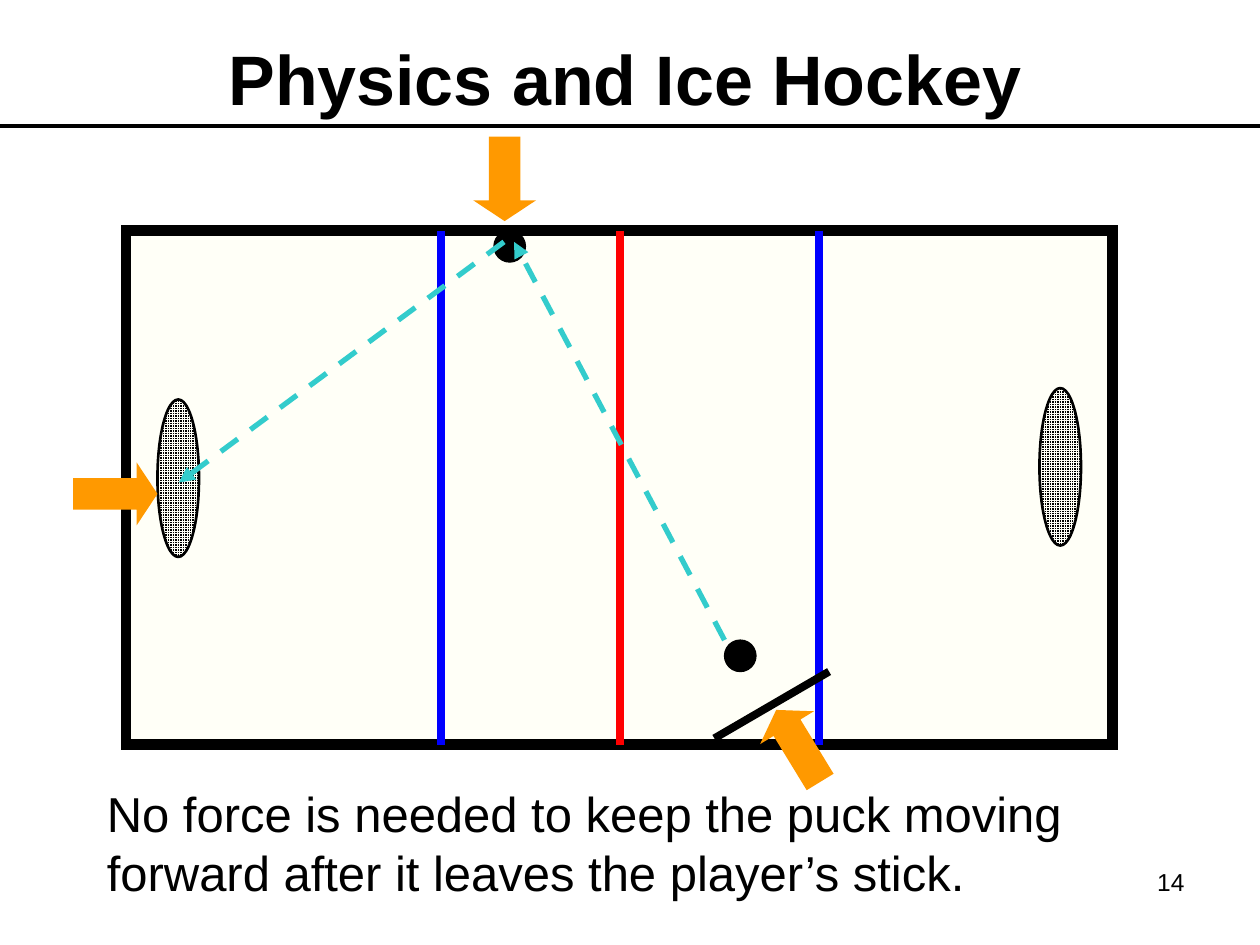
from pptx import Presentation
from pptx.util import Inches, Pt
from pptx.dml.color import RGBColor as RGB
from pptx.enum.dml import MSO_LINE as Dash, MSO_PATTERN as Pat
from pptx.enum.shapes import MSO_SHAPE as Form, MSO_CONNECTOR as Conn
from pptx.enum.text import MSO_ANCHOR as Anchor, MSO_AUTO_SIZE as Auto, PP_ALIGN as Align
from pptx.oxml.ns import qn
from lxml.etree import SubElement as Sub

THEME = {
    "font": "Arial", "ink": "000000", "ice": "FFFFF7", "red": "FF0000",
    "blue": "0000FF", "path": "33CCCC", "force": "FF9900",
    "title": 40, "body": 28, "page": 14,
}

TITLE = "Physics and Ice Hockey"
NOTE = ["No force is needed to keep the puck moving",
        "forward after it leaves the player’s stick."]
PAGE = ["14"]

RINK = (1, 1.83, 7.83, 4.08)
ZONES = [(4.92, "red"), (6.5, "blue"), (3.5, "blue")]
GOALS = [(1.25, 3.17), (8.25, 3.08)]
PUCKS = [(5.75, 5.08), (3.92, 1.83)]
STICK = ((5.67, 5.86), (6.58, 5.33))
SHOTS = [((5.75, 5.08), (4.08, 1.92)), ((4, 1.92), (1.42, 3.83))]
FORCES = [(6, 5.67, 238.6), (3.67, 1.17, 90), (0.58, 3.67, 0)]


def tint(name):
    return RGB.from_string(THEME[name])


def put(obj, vals):
    for key, val in vals.items():
        setattr(obj, key, val)


def place(box):
    return [Inches(v) for v in box]


def shape(form, box, fill, width=0):
    item = slide.shapes.add_shape(form, *place(box))
    item.shadow.inherit = False
    if fill == "net":
        item.fill.patterned()
        item.fill.pattern = Pat.SMALL_GRID
        item.fill.fore_color.rgb = tint("ice")
        item.fill.back_color.rgb = tint("ink")
    else:
        item.fill.solid()
        item.fill.fore_color.rgb = tint(fill)
    if width:
        item.line.color.rgb = tint("ink")
        item.line.width = Pt(width)
    else:
        item.line.fill.background()
    return item


def line(start, end, color, width, shot=False):
    item = slide.shapes.add_connector(Conn.STRAIGHT, *place(start + end))
    item.line.color.rgb = tint(color)
    item.line.width = Pt(width)
    props = item._element.spPr
    if shot:
        item.line.dash_style = Dash.DASH
        Sub(props.find(qn("a:ln")), qn("a:tailEnd"), type="triangle")
    Sub(props, qn("a:effectLst"))


def write(item, rows, size, bold=False, align=Align.LEFT, wrap=False):
    frame = item.text_frame
    frame.text = "\n".join(rows)
    put(frame, {"word_wrap": wrap, "auto_size": Auto.NONE,
                "vertical_anchor": Anchor.TOP})
    for para in frame.paragraphs:
        para.alignment = align
        put(para.runs[0].font, {"name": THEME["font"], "bold": bold,
                                "size": Pt(THEME[size])})
        para.runs[0].font.color.rgb = tint("ink")


deck = Presentation()
put(deck, {"slide_width": Inches(10), "slide_height": Inches(7.5)})
slide = deck.slides.add_slide(deck.slide_layouts[5])

head = slide.shapes.title
put(head, dict(zip(("left", "top", "width", "height"),
                   place((1.68, 0.23, 6.56, 0.77)))))
write(head, [TITLE], "title", bold=True, align=Align.CENTER)

rink = shape(Form.RECTANGLE, RINK, "ice", 6)
Sub(rink._element.spPr.find(qn("a:ln")), qn("a:miter"), lim="800000")

top, base = RINK[1], RINK[1] + RINK[3]
for x, color in ZONES:
    line((x, top), (x, base), color, 4.5)
for spot in GOALS:
    shape(Form.OVAL, spot + (0.33, 1.25), "net", 1.5)
for spot in PUCKS:
    shape(Form.OVAL, spot + (0.25, 0.25), "ink", 0.75)
line(*STICK, "ink", 4.5)
for start, end in SHOTS:
    line(start, end, "path", 3, shot=True)
for x, y, turn in FORCES:
    arrow = shape(Form.RIGHT_ARROW, (x, y, 0.67, 0.5), "force")
    arrow.rotation = turn
    arrow.adjustments[1] = 0.33

note = slide.shapes.add_textbox(*place((0.75, 6.17, 7.8, 1.03)))
write(note, NOTE, "body")
page = slide.shapes.add_textbox(*place((7.17, 6.83, 2.33, 0.52)))
write(page, PAGE, "page", align=Align.RIGHT, wrap=True)
line((0, 1), (10, 1), "ink", 2.25)

deck.save("out.pptx")
